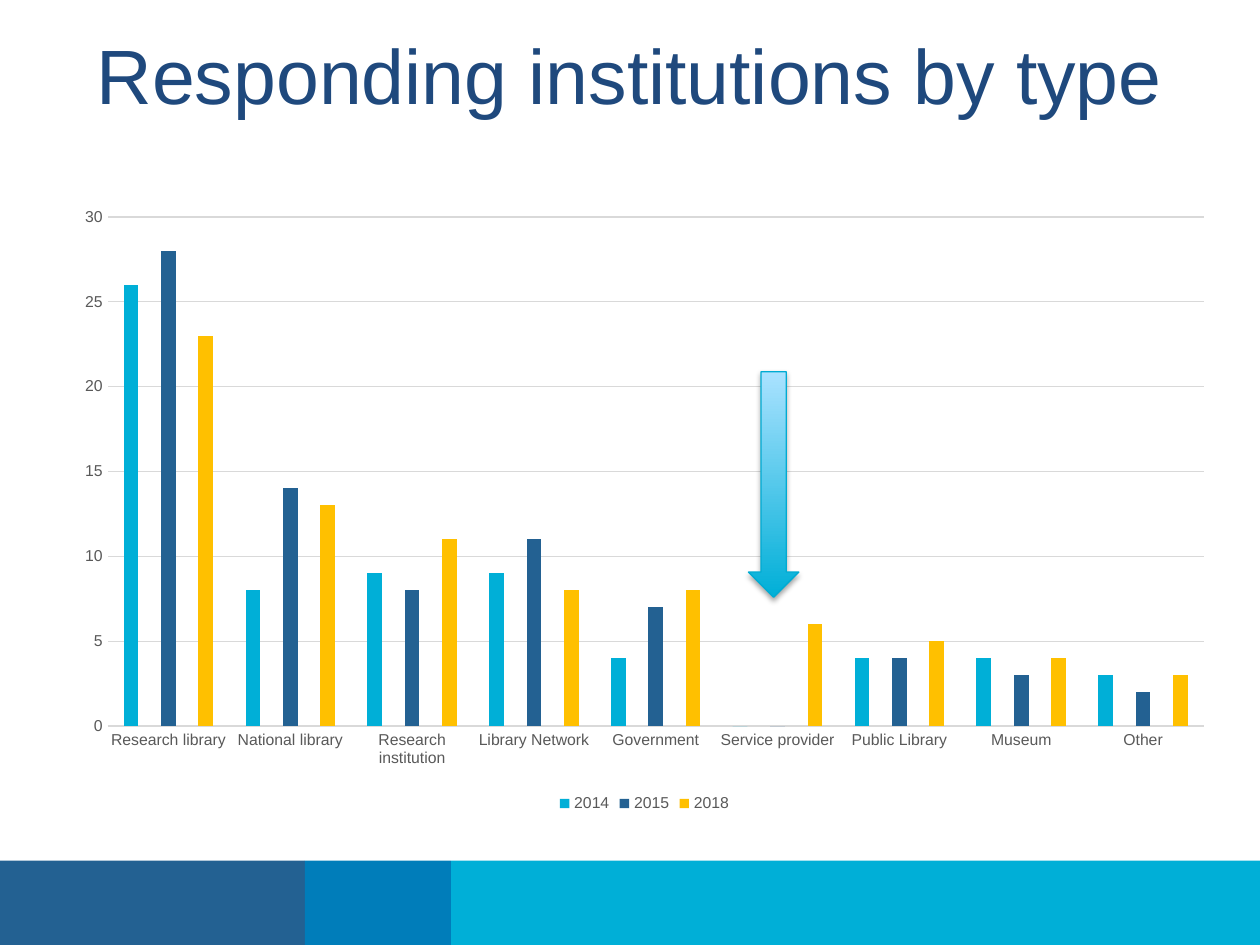
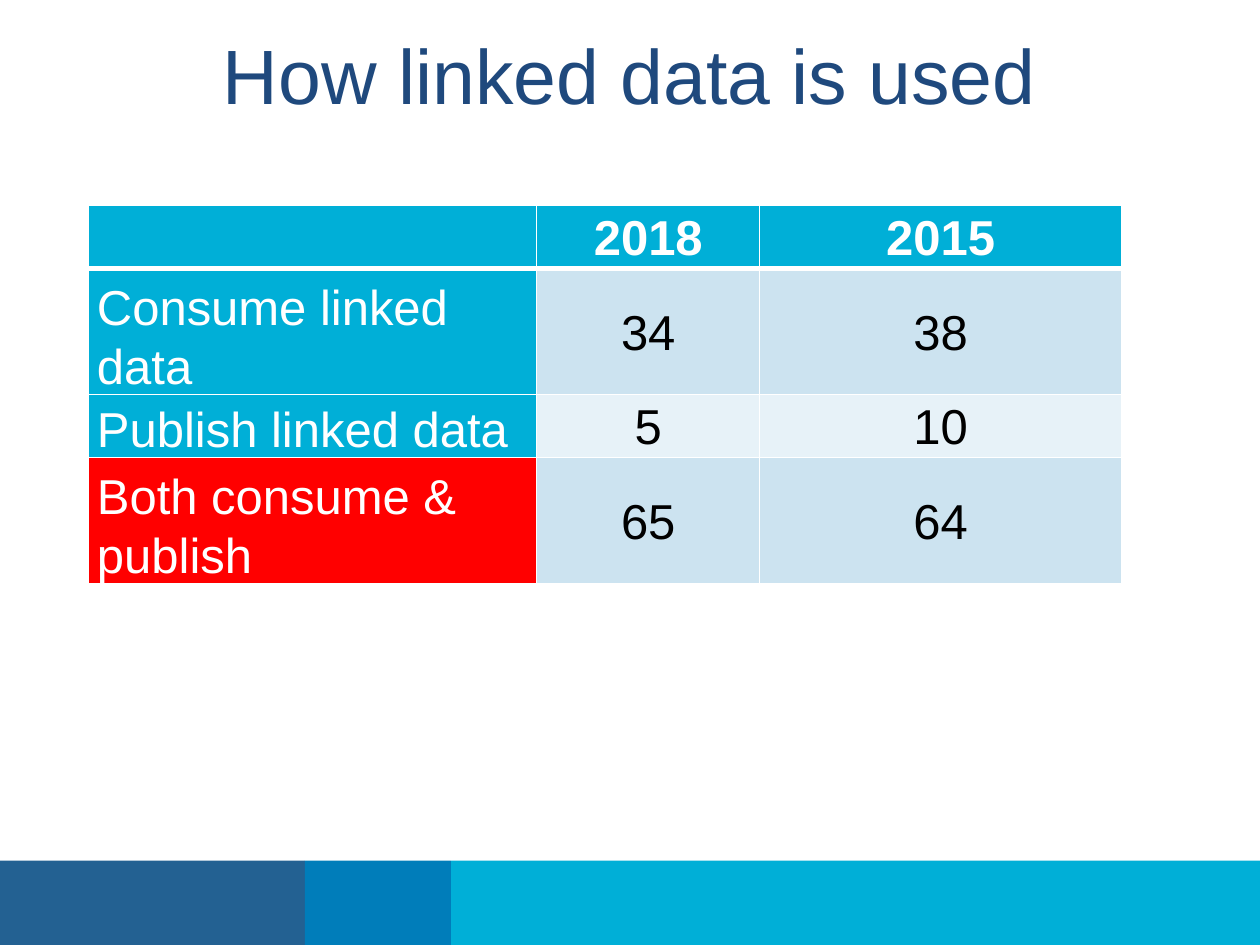
from lxml.etree import SubElement
from pptx import Presentation
from pptx.chart.data import CategoryChartData
from pptx.dml.color import RGBColor
from pptx.enum.chart import XL_CHART_TYPE, XL_LEGEND_POSITION, XL_TICK_MARK
from pptx.enum.shapes import MSO_SHAPE
from pptx.enum.text import MSO_ANCHOR, MSO_AUTO_SIZE, PP_ALIGN
from pptx.oxml import parse_xml
from pptx.oxml.ns import nsdecls, qn
from pptx.util import Inches, Pt

FONT = "Arial"
NAVY, BLUE, CYAN = "236192", "007DBA", "00AFD7"
TITLE, GRAY, GRID = "1F497D", "595959", "D9D9D9"
WHITE, BLACK, RED, GOLD = "FFFFFF", "000000", "FF0000", "FFC000"
TINTS = ["CCE3F0", "E7F2F8"]

BANDS = [(2.42, NAVY), (1.16, BLUE), (6.42, CYAN)]

TYPES = ["Research library", "National library", "Research institution",
         "Library Network", "Government", "Service provider",
         "Public Library", "Museum", "Other"]
BLANK = [None] * len(TYPES)
SERIES = [
    ("2014", CYAN, [26, 8, 9, 9, 4, 0, 4, 4, 3]),
    ("Series 2", NAVY, BLANK),
    ("2015", NAVY, [28, 14, 8, 11, 7, 0, 4, 3, 2]),
    ("Series 4", "007749", BLANK),
    ("2018", GOLD, [23, 13, 11, 8, 8, 6, 5, 4, 3]),
]

USES = [
    ("", "2018", "2015"),
    ("Consume linked data", "34", "38"),
    ("Publish linked data", "5", "10"),
    ("Both consume & publish", "65", "64"),
]
WIDTHS = [3.56, 1.77, 2.87]
HEIGHTS = [0.5, 1, 0.5, 1]


def rgb(code):
    return RGBColor.from_string(code)


def style(font, size, color, bold=False):
    font.name, font.size, font.bold = FONT, Pt(size), bold
    font.color.rgb = rgb(color)


def add_page(deck, text):
    page = deck.slides.add_slide(deck.slide_layouts[5])
    left = 0
    for width, color in BANDS:
        band = page.shapes.add_shape(MSO_SHAPE.RECTANGLE, Inches(left), Inches(6.83),
                                     Inches(width), Inches(0.67))
        band.shadow.inherit = False
        band.fill.solid()
        band.fill.fore_color.rgb = rgb(color)
        band.line.fill.background()
        left += width
    title = page.shapes.title
    title.left, title.top = Inches(-0.13), Inches(0.12)
    title.width, title.height = Inches(10.26), Inches(1.44)
    frame = title.text_frame
    frame.text = text
    frame.word_wrap = True
    frame.auto_size = MSO_AUTO_SIZE.NONE
    frame.vertical_anchor = MSO_ANCHOR.TOP
    frame.margin_top = Inches(0.1)
    frame.paragraphs[0].alignment = PP_ALIGN.CENTER
    style(frame.paragraphs[0].font, 44, TITLE)
    return page


def add_bars(page):
    data = CategoryChartData()
    data.categories = TYPES
    for name, _, vals in SERIES:
        data.add_series(name, vals)
    chart = page.shapes.add_chart(XL_CHART_TYPE.COLUMN_CLUSTERED, Inches(0.49), Inches(1.55),
                                  Inches(9.25), Inches(4.94), data).chart
    chart.has_title = False
    style(chart.font, 10, BLACK)

    plot = chart.plots[0]
    plot.gap_width, plot.overlap = 219, -27
    plot.vary_by_categories = False
    for bars, (_, color, _) in zip(plot.series, SERIES):
        bars.format.fill.solid()
        bars.format.fill.fore_color.rgb = rgb(color)

    for axis in (chart.category_axis, chart.value_axis):
        axis.major_tick_mark = axis.minor_tick_mark = XL_TICK_MARK.NONE
        style(axis.tick_labels.font, 9, GRAY)
    scale = chart.value_axis
    scale.minimum_scale, scale.maximum_scale, scale.major_unit = 0, 30, 5
    scale.format.line.fill.background()
    for rule in (chart.category_axis.format.line, scale.major_gridlines.format.line):
        rule.color.rgb = rgb(GRID)
        rule.width = Pt(0.75)

    chart.has_legend = True
    key = chart.legend
    key.position = XL_LEGEND_POSITION.BOTTOM
    key.include_in_layout = False
    style(key.font, 9, GRAY)
    spot = 1
    for index, (_, _, vals) in enumerate(SERIES):
        if vals is BLANK:
            entry = parse_xml(f'<c:legendEntry {nsdecls("c")}><c:idx val="{index}"/>'
                              '<c:delete val="1"/></c:legendEntry>')
            key._element.insert(spot, entry)
            spot += 1


def add_arrow(page):
    arrow = page.shapes.add_shape(MSO_SHAPE.DOWN_ARROW, Inches(5.94), Inches(2.95),
                                  Inches(0.4), Inches(1.79))
    arrow.fill.gradient()
    arrow.fill.gradient_angle = 90
    for stop, color in zip(arrow.fill.gradient_stops, (CYAN, "AAE2FF")):
        stop.color.rgb = rgb(color)
    arrow.line.color.rgb = rgb("00ABD2")
    arrow.line.width = Pt(0.75)
    arrow._element.spPr.append(parse_xml(
        f'<a:effectLst {nsdecls("a")}><a:outerShdw blurRad="{Pt(3.1)}" dist="{Pt(1.8)}" '
        f'dir="5400000" rotWithShape="0"><a:srgbClr val="{BLACK}"><a:alpha val="35000"/>'
        '</a:srgbClr></a:outerShdw></a:effectLst>'))


def edge(cell, row):
    props = cell._tc.get_or_add_tcPr()
    widths = {"L": 1, "R": 1, "T": 3 if row == 1 else 1, "B": 3 if row == 0 else 1}
    for side, width in widths.items():
        line = SubElement(props, qn(f"a:ln{side}"), w=str(Pt(width)))
        SubElement(SubElement(line, qn("a:solidFill")), qn("a:srgbClr"), val=WHITE)


def add_grid(page):
    grid = page.shapes.add_table(len(USES), len(WIDTHS), Inches(0.7), Inches(1.63),
                                 Inches(sum(WIDTHS)), Inches(sum(HEIGHTS))).table
    for column, width in zip(grid.columns, WIDTHS):
        column.width = Inches(width)
    for line, height in zip(grid.rows, HEIGHTS):
        line.height = Inches(height)
    for row, texts in enumerate(USES):
        for col, text in enumerate(texts):
            cell = grid.cell(row, col)
            head, label = row == 0, col == 0
            fill = CYAN if head or label else TINTS[(row - 1) % 2]
            if label and row == len(USES) - 1:
                fill = RED
            edge(cell, row)
            cell.fill.solid()
            cell.fill.fore_color.rgb = rgb(fill)
            cell.margin_left = cell.margin_right = Inches(0.07)
            cell.margin_top = cell.margin_bottom = 0
            cell.vertical_anchor = MSO_ANCHOR.BOTTOM if label else MSO_ANCHOR.MIDDLE
            if not text:
                continue
            cell.text = text
            para = cell.text_frame.paragraphs[0]
            para.alignment = PP_ALIGN.LEFT if label else PP_ALIGN.CENTER
            para.line_spacing, para.space_after = 1.07, Pt(8)
            style(para.font, 28, WHITE if head or label else BLACK, head)


def main():
    deck = Presentation()
    deck.slide_width, deck.slide_height = Inches(10), Inches(7.5)
    page = add_page(deck, "Responding institutions by type")
    add_bars(page)
    add_arrow(page)
    add_grid(add_page(deck, "How linked data is used"))
    deck.save("out.pptx")


if __name__ == "__main__":
    main()
